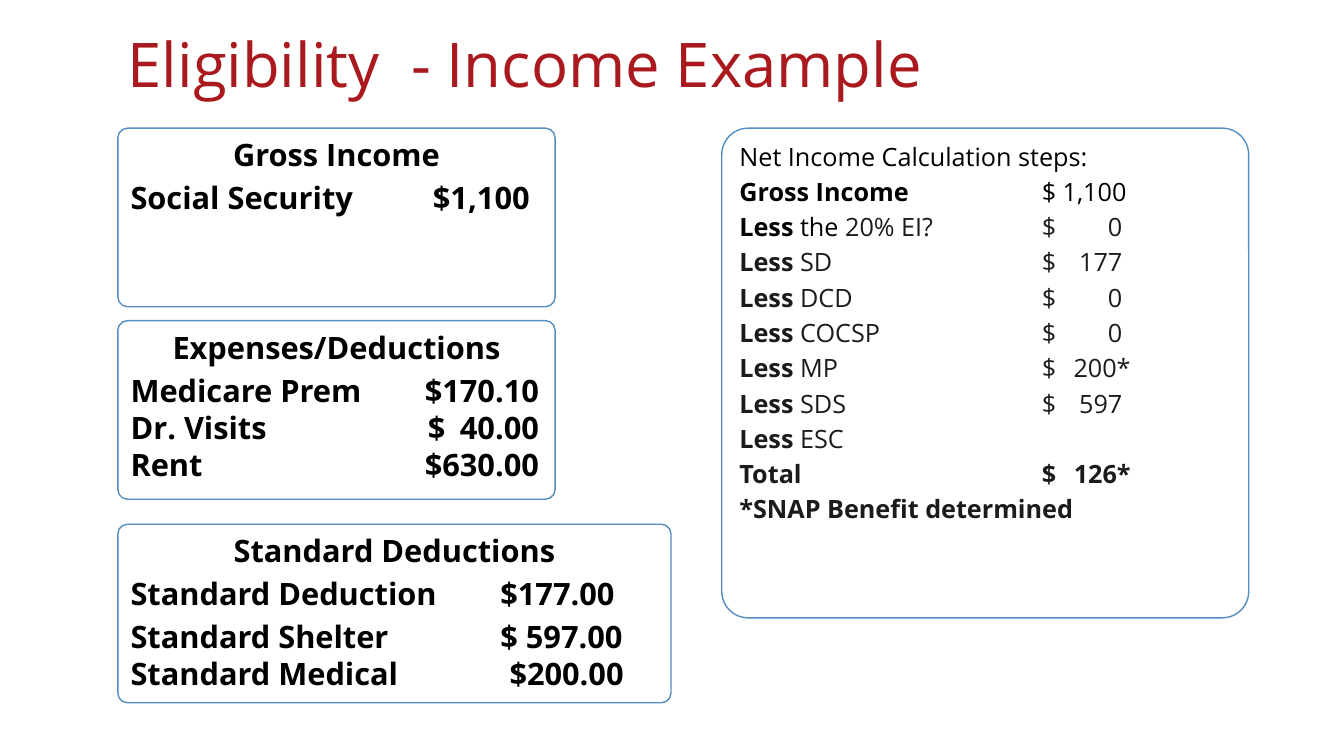
"""Build the income eligibility example slide."""
from lxml import etree
from pptx import Presentation
from pptx import util as u
from pptx.dml.color import RGBColor
from pptx.enum import shapes, text
from pptx.oxml.ns import qn

THEME = {
    "font": "Open Sans",
    "title": "AA191E", "black": "000000", "soft": "1B1B1B",
    "fill": "FFFFFF", "line": "538DC1",
    "title_size": 44, "card_size": 22, "steps_size": 18,
    "corner": 0.054, "space": 0.2,
}

TITLE = "Eligibility\t- Income Example"
TITLE_BOX = (2.97, 0.53, 27.91, 2.36)
TITLE_TABS = [(7.14, "l")]

LEFT, CARD_HEIGHT = 2.97, 4.5
MONEY_RIGHT = [(10.29, "r")]
CARDS = [
    (3.23, 11.02, "Gross Income", [
        ("Social Security\t$1,100", [(7.62, "l")], True),
    ]),
    (8.08, 11.02, "Expenses/Deductions", [
        ("Medicare Prem\t$170.10", MONEY_RIGHT, True),
        ("Dr. Visits\t$\t40.00", [(7.49, "l")] + MONEY_RIGHT, False),
        ("Rent\t$630.00", MONEY_RIGHT, False),
    ]),
    (13.21, 13.94, "Standard Deductions", [
        ("Standard Deduction\t$177.00", [(9.32, "l")], True),
        ("Standard Shelter\t$ 597.00", [(9.32, "l")], True),
        ("Standard Medical\t$200.00", [(9.55, "l")], False),
    ]),
]

STEPS_BOX = (18.19, 3.23, 13.28, 12.34)
DOLLAR_TAB, AMOUNT_TAB, STARRED_TAB = 7.62, 9.65, 9.86
STEPS = [
    [("Net Income Calculation steps:", False, "black")],
    [("Gross Income", True, "black"), ("\t$ 1,100", False, "black")],
    [("Less", True, "black"), (" the ", False, "black"), ("20% EI?\t$\t0", False, "soft")],
]
for name, amount in [("SD", "\t$\t177"), ("DCD", "\t$\t0"), ("COCSP", "\t$\t0"),
                     ("MP", "\t$\t200*"), ("SDS", "\t$\t597"), ("ESC", "")]:
    STEPS.append([("Less ", True, "soft"), (name + amount, False, "soft")])
STEPS += [
    [("Total\t$\t126*", True, "soft")],
    [("*SNAP Benefit determined", True, "soft")],
]


def add_text(tf, runs, size, align="LEFT", before=0, tabs=(), spacing=None):
    """Fill the empty first paragraph, or add one, with formatted runs."""
    p = tf.paragraphs[0]
    if p.runs:
        p = tf.add_paragraph()
    if tabs:
        tab_list = etree.SubElement(p._p.get_or_add_pPr(), qn("a:tabLst"))
        for pos, algn in tabs:
            etree.SubElement(tab_list, qn("a:tab"), pos=str(int(u.Cm(pos))), algn=algn)
    p.alignment = getattr(text.PP_ALIGN, align)
    p.space_before = u.Pt(before)
    if spacing:
        p.line_spacing = spacing
    for words, bold, color in runs:
        r = p.add_run()
        r.text = words
        r.font.name = THEME["font"]
        r.font.size = u.Pt(size)
        r.font.bold = bold
        r.font.color.rgb = RGBColor.from_string(THEME[color])


def add_card(s, box):
    """Add an outlined rounded card and return its text frame."""
    sp = s.shapes.add_shape(shapes.MSO_SHAPE.ROUNDED_RECTANGLE, *map(u.Cm, box))
    sp.adjustments[0] = THEME["corner"]
    sp.shadow.inherit = False
    sp.fill.solid()
    sp.fill.fore_color.rgb = RGBColor.from_string(THEME["fill"])
    sp.line.color.rgb = RGBColor.from_string(THEME["line"])
    sp.line.width = u.Pt(1)
    tf = sp.text_frame
    tf.word_wrap = True
    tf.vertical_anchor = text.MSO_ANCHOR.TOP
    return tf


def main():
    """Compose and save the slide."""
    prs = Presentation()
    prs.slide_width, prs.slide_height = u.Cm(33.87), u.Cm(19.05)
    s = prs.slides.add_slide(prs.slide_layouts[6])

    tf = s.shapes.add_textbox(*map(u.Cm, TITLE_BOX)).text_frame
    tf.word_wrap = True
    tf.vertical_anchor = text.MSO_ANCHOR.MIDDLE
    add_text(tf, [(TITLE, False, "title")], THEME["title_size"],
             tabs=TITLE_TABS, spacing=0.9)

    size = THEME["card_size"]
    for top, width, heading, rows in CARDS:
        tf = add_card(s, (LEFT, top, width, CARD_HEIGHT))
        add_text(tf, [(heading, True, "black")], size, align="CENTER")
        for words, tabs, spaced in rows:
            add_text(tf, [(words, True, "black")], size, tabs=tabs,
                     before=size * THEME["space"] if spaced else 0)

    size = THEME["steps_size"]
    tf = add_card(s, STEPS_BOX)
    for i, runs in enumerate(STEPS):
        amount_tab = STARRED_TAB if runs[-1][0].endswith("*") else AMOUNT_TAB
        add_text(tf, runs, size, before=size * THEME["space"] if i else 0,
                 tabs=[(DOLLAR_TAB, "l"), (amount_tab, "r")])

    prs.save("out.pptx")


if __name__ == "__main__":
    main()
